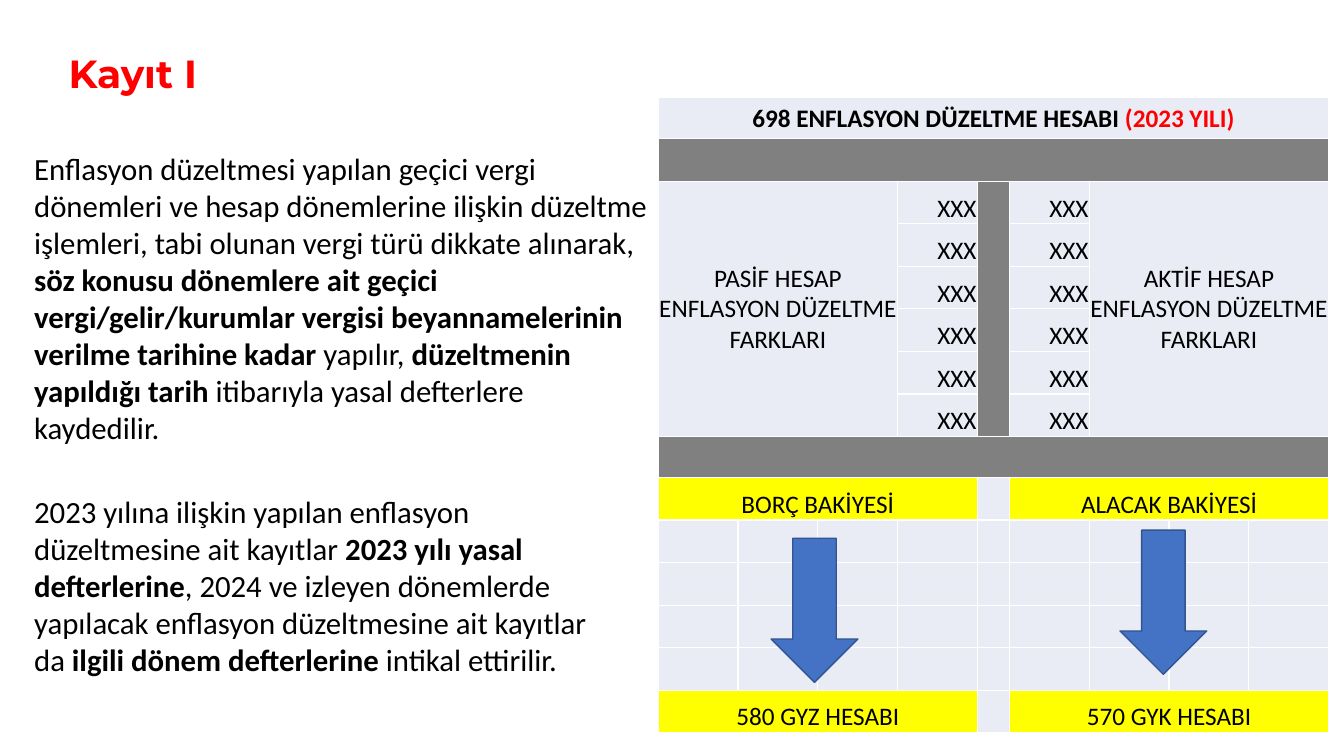
from lxml.etree import SubElement
from pptx import Presentation
from pptx.dml.color import RGBColor
from pptx.enum.shapes import MSO_SHAPE
from pptx.enum.text import MSO_ANCHOR, PP_ALIGN
from pptx.oxml.ns import qn
from pptx.util import Pt

COLORS = {"black": "000000", "red": "FF0000", "white": "FFFFFF", "pale": "E9EBF5",
          "gray": "808080", "yellow": "FFFF00", "blue": "4472C4", "outline": "325491"}

# Each run is (text, bold, colour)
TIMING = [
    ("Enflasyon düzeltmesi yapılan geçici vergi dönemleri ve hesap dönemlerine ilişkin "
     "düzeltme işlemleri, tabi olunan vergi türü dikkate alınarak, ", False, "black"),
    ("söz konusu dönemlere ait geçici vergi/gelir/kurumlar vergisi beyannamelerinin "
     "verilme tarihine kadar ", True, "black"),
    ("yapılır, ", False, "black"),
    ("düzeltmenin yapıldığı tarih ", True, "black"),
    ("itibarıyla yasal defterlere kaydedilir.", False, "black"),
]
LEDGERS = [
    ("2023 yılına ilişkin yapılan enflasyon düzeltmesine ait kayıtlar ", False, "black"),
    ("2023 yılı yasal defterlerine", True, "black"),
    (", 2024 ve izleyen dönemlerde yapılacak enflasyon düzeltmesine ait kayıtlar da ",
     False, "black"),
    ("ilgili dönem defterlerine ", True, "black"),
    ("intikal ettirilir.", False, "black"),
]
ACCOUNT = [("698 ENFLASYON DÜZELTME HESABI ", True, "black"), ("(2023 YILI)", True, "red")]

ROWS, COLS, SPINE = 15, 9, 4
ENTRY_ROWS = range(2, 8)
SHORT_ROWS = (0, 8)


def rgb(name):
    return RGBColor.from_string(COLORS[name])


def write(p, runs, size, font="Calibri"):
    p.font.size, p.font.name = Pt(size), font
    for text, bold, color in runs:
        r = p.add_run()
        r.text = text
        r.font.bold = bold
        r.font.color.rgb = rgb(color)


def add_text(s, box, runs, size, font="Calibri", inset=(7.2, 3.6)):
    tf = s.shapes.add_textbox(*map(Pt, box)).text_frame
    tf.word_wrap = True
    tf.margin_left = tf.margin_right = Pt(inset[0])
    tf.margin_top = tf.margin_bottom = Pt(inset[1])
    write(tf.paragraphs[0], runs, size, font)


def style_cell(cell):
    """Pale fill, thin margins and white 1 pt borders."""
    cell.margin_left = cell.margin_right = cell.margin_top = Pt(0.6)
    cell.margin_bottom = 0
    tcPr = cell._tc.get_or_add_tcPr()
    for side in ("a:lnL", "a:lnR", "a:lnT", "a:lnB"):
        ln = SubElement(tcPr, qn(side), w=str(Pt(1)))
        SubElement(SubElement(ln, qn("a:solidFill")), qn("a:srgbClr"), val=COLORS["white"])
    paint(cell, "pale")


def paint(cell, color):
    cell.fill.solid()
    cell.fill.fore_color.rgb = rgb(color)


def fill_cell(cell, runs, align=PP_ALIGN.CENTER, anchor=MSO_ANCHOR.BOTTOM):
    cell.vertical_anchor = anchor
    p = cell.text_frame.paragraphs[0]
    p.alignment = align
    write(p, runs, 18)


def merge(table, row, col, height, width):
    cell = table.cell(row, col)
    cell.merge(table.cell(row + height - 1, col + width - 1))
    return cell


def add_ledger(s):
    """T-account with a gray frame, entry rows and balance rows."""
    table = s.shapes.add_table(ROWS, COLS, Pt(470.2), Pt(69.8), Pt(479), Pt(453.8)).table
    table.first_row = table.horz_banding = False
    for i, col in enumerate(table.columns):
        col.width = Pt(23 if i == SPINE else 57)
    for i, row in enumerate(table.rows):
        row.height = Pt(29.3 if i in SHORT_ROWS else 30.4)
    for cell in table.iter_cells():
        style_cell(cell)

    fill_cell(merge(table, 0, 0, 1, COLS), ACCOUNT, anchor=MSO_ANCHOR.MIDDLE)
    first, count = ENTRY_ROWS[0], len(ENTRY_ROWS)
    for bar in ((1, 0, 1, COLS), (first, SPINE, count, 1), (8, 0, 1, COLS)):
        paint(merge(table, *bar), "gray")

    for col, side in ((0, "PASİF"), (6, "AKTİF")):
        label = f"{side} HESAP ENFLASYON DÜZELTME FARKLARI"
        fill_cell(merge(table, first, col, count, 3), [(label, False, "black")],
                  anchor=MSO_ANCHOR.MIDDLE)
    for row in ENTRY_ROWS:
        for col in (SPINE - 1, SPINE + 1):
            fill_cell(table.cell(row, col), [("XXX", False, "black")], PP_ALIGN.RIGHT)

    for row, labels in ((9, ("BORÇ BAKİYESİ", "ALACAK BAKİYESİ")),
                        (14, ("580 GYZ HESABI", "570 GYK HESABI"))):
        for col, label in zip((0, SPINE + 1), labels):
            cell = merge(table, row, col, 1, 4)
            paint(cell, "yellow")
            fill_cell(cell, [(label, False, "black")])


def add_down_arrow(s, left, top):
    arrow = s.shapes.add_shape(MSO_SHAPE.DOWN_ARROW, Pt(left), Pt(top), Pt(62), Pt(103))
    arrow.shadow.inherit = False
    arrow.fill.solid()
    arrow.fill.fore_color.rgb = rgb("blue")
    arrow.line.color.rgb = rgb("outline")
    arrow.line.width = Pt(1)


def main():
    prs = Presentation()
    prs.slide_width, prs.slide_height = Pt(960), Pt(540)
    s = prs.slides.add_slide(prs.slide_layouts[6])
    add_text(s, (49, 35.3, 203, 44), [("Kayıt I", True, "red")], 28, "Montserrat", (0, 0))
    add_text(s, (17.3, 103.7, 453, 245), TIMING, 22)
    add_text(s, (17.3, 348.5, 434, 163), LEDGERS, 22)
    add_ledger(s)
    add_down_arrow(s, 550.8, 384.5)
    add_down_arrow(s, 800, 378.7)
    prs.save("out.pptx")


if __name__ == "__main__":
    main()
